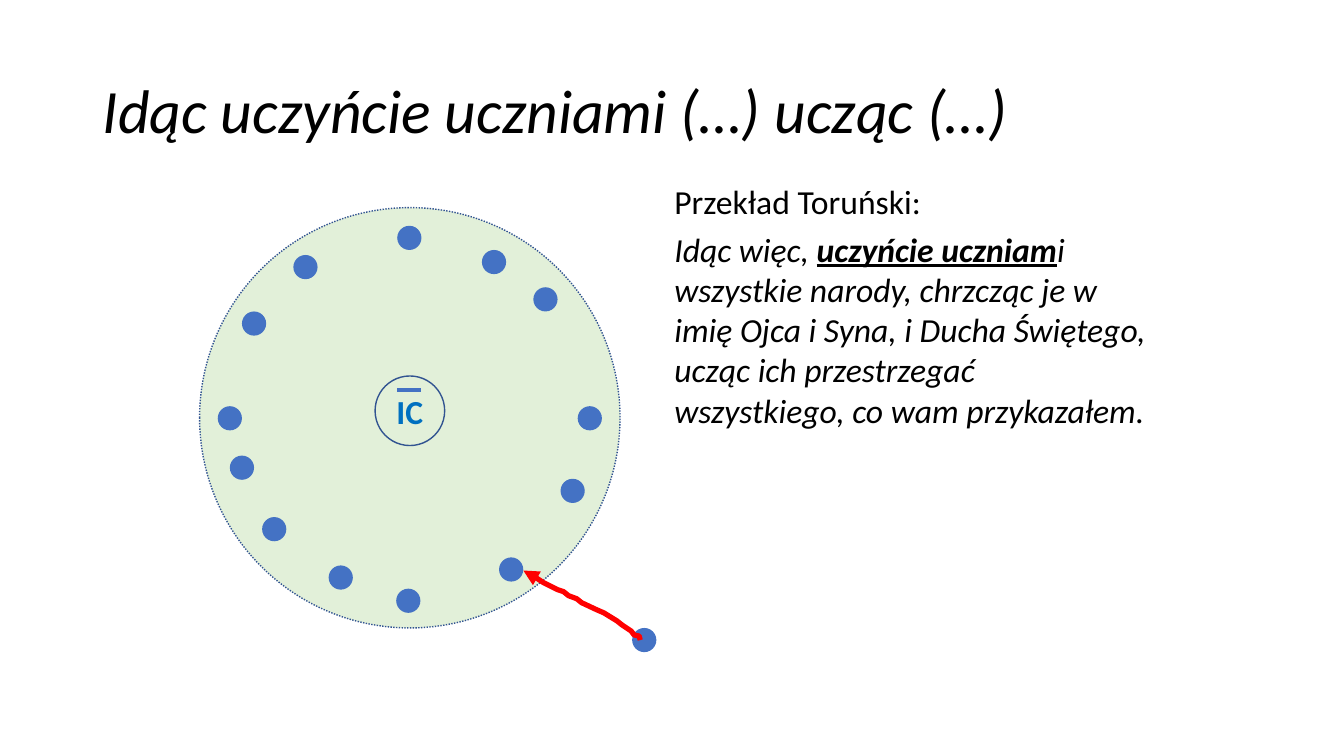
"""Build a slide showing a newcomer joining a circle of disciples."""
from lxml import etree
from pptx import Presentation
from pptx.dml.color import RGBColor
from pptx.enum.dml import MSO_LINE
from pptx.enum.shapes import MSO_CONNECTOR, MSO_SHAPE
from pptx.enum.text import MSO_ANCHOR, PP_ALIGN
from pptx.oxml.ns import qn
from pptx.util import Inches, Pt

OVAL = MSO_SHAPE.OVAL
STRAIGHT = MSO_CONNECTOR.STRAIGHT
DOTTED = MSO_LINE.ROUND_DOT
MIDDLE = MSO_ANCHOR.MIDDLE
CENTER = PP_ALIGN.CENTER

BLACK = RGBColor(0x00, 0x00, 0x00)
GREEN = RGBColor(0xE2, 0xF0, 0xD9)
BLUE = RGBColor(0x44, 0x72, 0xC4)
OUTLINE = RGBColor(0x32, 0x54, 0x91)
LETTER_BLUE = RGBColor(0x00, 0x70, 0xC0)
RED = RGBColor(0xFF, 0x00, 0x00)

DOT = 0.24
DISCIPLES = [
    (3.94, 2.24), (4.78, 2.48), (5.29, 2.85), (5.73, 4.03), (5.56, 4.75),
    (4.95, 5.53), (3.93, 5.84), (3.26, 5.61), (2.6, 5.13), (2.28, 4.52),
    (2.16, 4.03), (2.4, 3.09), (2.91, 2.53),
]
NEWCOMER = (6.27, 6.23)
ARROW_POINTS = [
    (5.19, 5.66), (5.33, 5.74), (5.39, 5.78), (5.53, 5.85), (5.59, 5.87),
    (5.64, 5.91), (5.72, 5.94), (5.77, 5.98), (5.92, 6.05), (5.99, 6.08),
    (6.12, 6.16), (6.17, 6.2), (6.26, 6.26), (6.29, 6.3), (6.34, 6.31),
    (6.35, 6.35),
]
VERSE = [
    ("Idąc więc, ", False),
    ("uczyńcie uczniam", True),
    ("i wszystkie narody, chrzcząc je w imię Ojca i Syna, i Ducha Świętego, "
     "ucząc ich przestrzegać wszystkiego, co wam przykazałem.", False),
]


def add_circle(left, top, size, fill=None, line=None):
    circle = s.shapes.add_shape(OVAL, Inches(left), Inches(top), Inches(size), Inches(size))
    circle.shadow.inherit = False
    if fill is None:
        circle.fill.background()
    else:
        circle.fill.solid()
        circle.fill.fore_color.rgb = fill
    if line is None:
        circle.line.fill.background()
    else:
        circle.line.color.rgb = line
        circle.line.width = Pt(1)
    return circle


def style_run(r, size, color=BLACK, bold=False, italic=False):
    r.font.name = "Calibri"
    r.font.size = Pt(size)
    r.font.color.rgb = color
    r.font.bold = bold
    r.font.italic = italic


prs = Presentation()
prs.slide_width = Inches(13.33)
prs.slide_height = Inches(7.5)
s = prs.slides.add_slide(prs.slide_layouts[6])

title = s.shapes.add_textbox(Inches(0.92), Inches(0.4), Inches(11.5), Inches(1.45))
tf = title.text_frame
tf.word_wrap = True
tf.vertical_anchor = MIDDLE
tf.text = "Idąc uczyńcie uczniami (…) ucząc (…)"
tf.paragraphs[0].line_spacing = 0.9
style_run(tf.paragraphs[0].runs[0], 44, italic=True)

community = add_circle(1.98, 2.06, 4.17, GREEN, OUTLINE)
community.line.dash_style = DOTTED

for left, top in DISCIPLES + [NEWCOMER]:
    add_circle(left, top, DOT, BLUE)

christ = add_circle(3.72, 3.73, 0.69, line=OUTLINE)
tf = christ.text_frame
tf.word_wrap = False
tf.vertical_anchor = MIDDLE
tf.text = "IC"
tf.paragraphs[0].alignment = CENTER
style_run(tf.paragraphs[0].runs[0], 24, LETTER_BLUE, bold=True)

overline = s.shapes.add_connector(STRAIGHT, Inches(3.94), Inches(3.87), Inches(4.18), Inches(3.87))
overline.line.color.rgb = BLUE
overline.line.width = Pt(2.25)
etree.SubElement(overline._element.spPr, qn("a:effectLst"))

passage = s.shapes.add_textbox(Inches(6.59), Inches(1.75), Inches(4.89), Inches(4.95))
tf = passage.text_frame
tf.word_wrap = True
tf.text = "Przekład Toruński:"
style_run(tf.paragraphs[0].runs[0], 24)
p = tf.add_paragraph()
p.space_before = Pt(4.8)
for text, stressed in VERSE:
    r = p.add_run()
    r.text = text
    style_run(r, 24, bold=stressed, italic=True)
    r.font.underline = stressed

points = [(Inches(x), Inches(y)) for x, y in ARROW_POINTS]
builder = s.shapes.build_freeform(*points[0])
builder.add_line_segments(points[1:], close=False)
arrow = builder.convert_to_shape()
arrow.shadow.inherit = False
arrow.fill.background()
arrow.line.color.rgb = RED
arrow.line.width = Pt(3.75)
etree.SubElement(arrow.line._get_or_add_ln(), qn("a:headEnd"), type="triangle")

prs.save("out.pptx")
